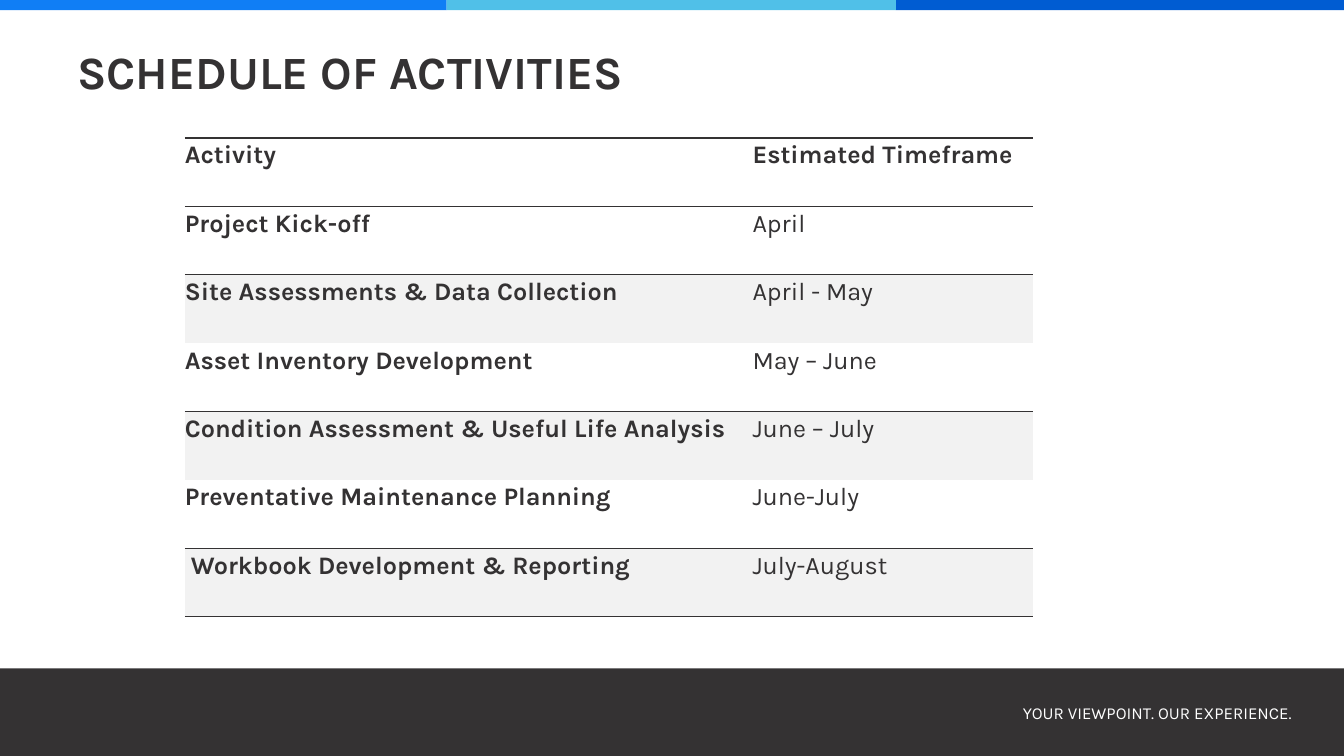
from dataclasses import dataclass

from lxml.etree import SubElement
from pptx import Presentation
from pptx.dml.color import RGBColor
from pptx.enum.shapes import MSO_SHAPE
from pptx.enum.text import MSO_ANCHOR, MSO_AUTO_SIZE, PP_ALIGN
from pptx.oxml.ns import qn
from pptx.slide import Slide
from pptx.table import _Cell
from pptx.text.text import TextFrame
from pptx.util import Pt

FONT = "Karla"
CHARCOAL = RGBColor(0x34, 0x32, 0x33)
WHITE = RGBColor(0xFF, 0xFF, 0xFF)
BAND = RGBColor(0xF2, 0xF2, 0xF2)
BLUE = RGBColor(0x10, 0x7E, 0xF5)
SKY = RGBColor(0x50, 0xC0, 0xE8)
NAVY = RGBColor(0x00, 0x5C, 0xD2)

COLUMN_WIDTHS = (405.5, 200.7)
ROW_HEIGHT = 48.86


@dataclass(frozen=True)
class Bar:
    left: float
    top: float
    width: float
    height: float
    color: RGBColor


@dataclass(frozen=True)
class Activity:
    name: str
    timeframe: str
    indent: float = 0


BARS = (
    Bar(0, 477.4, 960, 62.6, CHARCOAL),
    Bar(640, 0, 320, 7.2, NAVY),
    Bar(0, 0, 319, 7.2, BLUE),
    Bar(319, 0, 321, 7.2, SKY),
)

SCHEDULE = (
    Activity("Activity", "Estimated Timeframe"),
    Activity("Project Kick-off", "April"),
    Activity("Site Assessments & Data Collection", "April - May"),
    Activity("Asset Inventory Development", "May – June"),
    Activity("Condition Assessment & Useful Life Analysis", "June – July"),
    Activity("Preventative Maintenance Planning", "June-July"),
    Activity("Workbook Development & Reporting", "July-August", indent=4.4),
)

# Rule widths from the top of the table to its bottom; 0 means no rule
RULES = (2.25, 1, 0.5, 0, 0.5, 0, 0.5, 1)


def write(tf: TextFrame, text: str, *, size: float, color: RGBColor = CHARCOAL,
          bold: bool = False, align: PP_ALIGN = PP_ALIGN.LEFT) -> None:
    p = tf.paragraphs[0]
    p.alignment = align
    r = p.add_run()
    r.text = text
    r.font.name = FONT
    r.font.size = Pt(size)
    r.font.bold = bold
    r.font.color.rgb = color


def add_bar(s: Slide, bar: Bar) -> None:
    sp = s.shapes.add_shape(MSO_SHAPE.RECTANGLE, Pt(bar.left), Pt(bar.top),
                            Pt(bar.width), Pt(bar.height))
    sp.shadow.inherit = False
    sp.fill.solid()
    sp.fill.fore_color.rgb = bar.color
    sp.line.fill.background()


def set_borders(cell: _Cell, top: float, bottom: float) -> None:
    """Rule the cell above and below; must run before the cell is filled."""
    tc_pr = cell._tc.get_or_add_tcPr()
    for tag, width in (("a:lnL", 0), ("a:lnR", 0), ("a:lnT", top), ("a:lnB", bottom)):
        ln = SubElement(tc_pr, qn(tag), w=str(Pt(width)))
        if width:
            fill = SubElement(ln, qn("a:solidFill"))
            SubElement(fill, qn("a:srgbClr"), val=str(CHARCOAL))
        else:
            SubElement(ln, qn("a:noFill"))


def add_schedule(s: Slide) -> None:
    frame = s.shapes.add_table(len(SCHEDULE), len(COLUMN_WIDTHS), Pt(132), Pt(98.6),
                               Pt(sum(COLUMN_WIDTHS)), Pt(ROW_HEIGHT * len(SCHEDULE)))
    table = frame.table
    table.first_row = table.horz_banding = False
    for column, width in zip(table.columns, COLUMN_WIDTHS):
        column.width = Pt(width)
    for i, activity in enumerate(SCHEDULE):
        table.rows[i].height = Pt(ROW_HEIGHT)
        for j, text in enumerate((activity.name, activity.timeframe)):
            cell = table.cell(i, j)
            set_borders(cell, RULES[i], RULES[i + 1])
            if i and i % 2 == 0:
                cell.fill.solid()
                cell.fill.fore_color.rgb = BAND
            else:
                cell.fill.background()
            cell.margin_left = Pt(activity.indent if j == 0 else 0)
            cell.margin_top, cell.margin_right, cell.margin_bottom = Pt(2), Pt(6), Pt(18)
            write(cell.text_frame, text, size=18, bold=i == 0 or j == 0)


def add_title(s: Slide) -> None:
    title = s.shapes.title
    title.left, title.top, title.width, title.height = Pt(48), Pt(21.6), Pt(864), Pt(57.6)
    tf = title.text_frame
    tf.auto_size = MSO_AUTO_SIZE.NONE
    tf.vertical_anchor = MSO_ANCHOR.MIDDLE
    write(tf, "SCHEDULE OF ACTIVITIES", size=33, bold=True)


def add_tagline(s: Slide) -> None:
    tf = s.shapes.add_textbox(Pt(570), Pt(498.2), Pt(360), Pt(21.6)).text_frame
    tf.word_wrap = True
    write(tf, "YOUR VIEWPOINT. OUR EXPERIENCE.", size=12, color=WHITE,
          align=PP_ALIGN.RIGHT)


def main() -> None:
    prs = Presentation()
    prs.slide_width, prs.slide_height = Pt(960), Pt(540)
    s = prs.slides.add_slide(prs.slide_layouts.get_by_name("Title Only"))
    for bar in BARS:
        add_bar(s, bar)
    add_tagline(s)
    add_title(s)
    add_schedule(s)
    prs.save("out.pptx")


if __name__ == "__main__":
    main()
